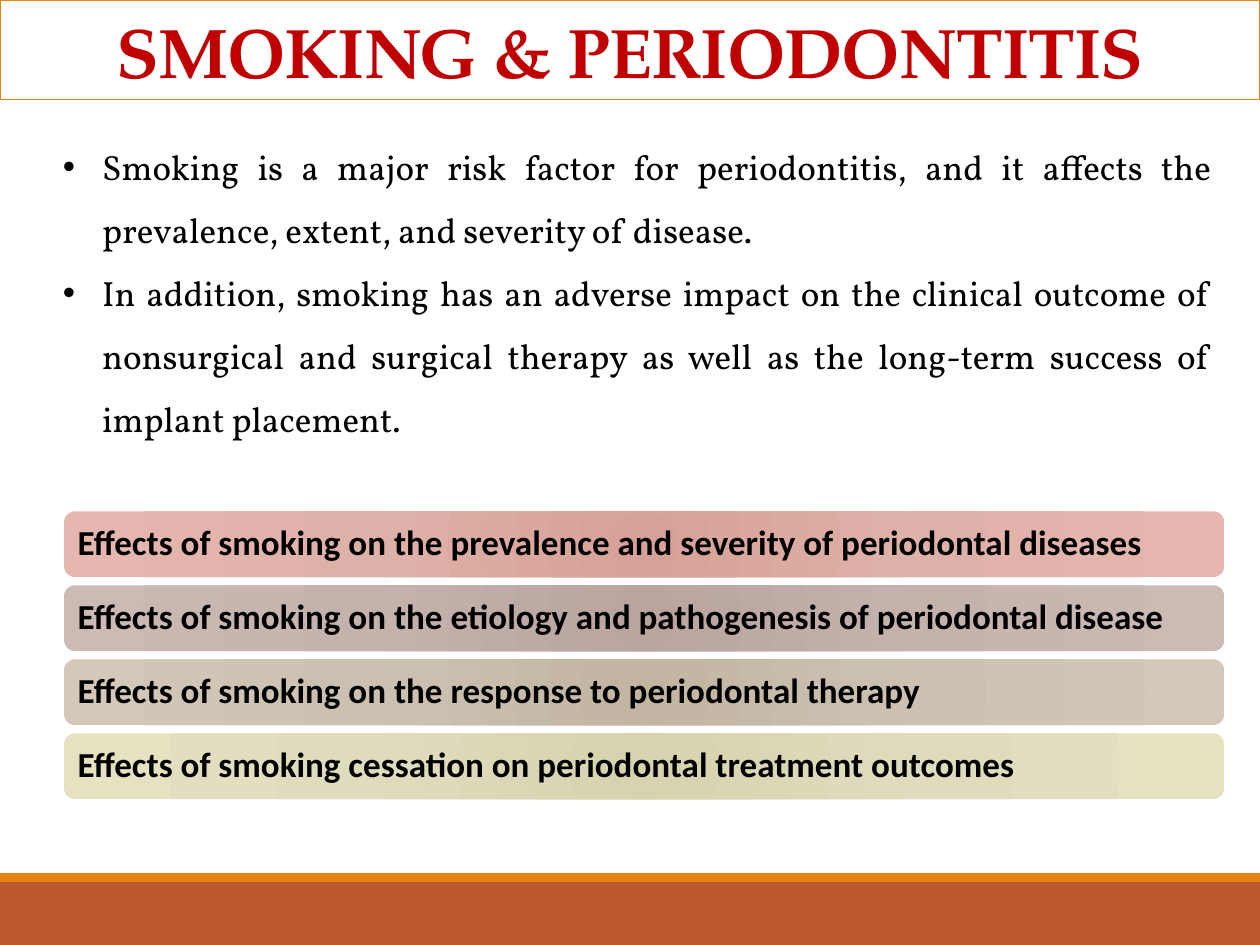
from pptx import Presentation
from pptx.dml.color import RGBColor
from pptx.enum import shapes, text
from pptx.oxml import parse_xml
from pptx.oxml.ns import nsdecls
from pptx.util import Pt

# Content
TITLE = "SMOKING & PERIODONTITIS"
POINTS = [
    "Smoking is a major risk factor for periodontitis, and it affects the "
    "prevalence, extent, and severity of disease. ",
    "In addition, smoking has an adverse impact on the clinical outcome of "
    "nonsurgical and surgical therapy as well as the long-term success of "
    "implant placement.",
]
# Topic, then its gradient colours from the centre outwards
TOPICS = [
    ("Effects of smoking on the prevalence and severity of periodontal diseases",
     ("D7A197", "DEB1A8", "E6B7AE")),
    ("Effects of smoking on the etiology and pathogenesis of periodontal disease",
     ("B9A49E", "C4B2AD", "CCBAB5")),
    ("Effects of smoking on the response to periodontal therapy",
     ("C2B5A2", "CCC1B1", "D4C8B8")),
    ("Effects of smoking cessation on periodontal treatment outcomes",
     ("D7D3AF", "DFDBBD", "E5E1C1")),
]
STOPS = (0, 45, 100)

RUST = RGBColor(0xBD, 0x58, 0x2C)
ORANGE = RGBColor(0xE4, 0x83, 0x12)
RED = RGBColor(0xC0, 0x00, 0x00)
BLACK = RGBColor(0, 0, 0)
WHITE = RGBColor(0xFF, 0xFF, 0xFF)

# Layout, in points
WIDTH, HEIGHT = 720, 540
BAR_LEFT, BAR_TOP, BAR_WIDTH, BAR_HEIGHT, BAR_PITCH = 36.6, 292.2, 663, 37.6, 42.3


def place(shape, left, top, width, height):
    shape.left, shape.top = Pt(left), Pt(top)
    shape.width, shape.height = Pt(width), Pt(height)


def add_box(page, kind, left, top, width, height, fill=None):
    box = page.shapes.add_shape(kind, Pt(left), Pt(top), Pt(width), Pt(height))
    box.shadow.inherit = False
    box.line.fill.background()
    if fill is not None:
        box.fill.solid()
        box.fill.fore_color.rgb = fill
    return box


def write(para, words, *, font, size, color=BLACK, bold=False,
          align=text.PP_ALIGN.LEFT, spacing=1.0):
    para.alignment = align
    para.line_spacing = spacing
    para.space_before = para.space_after = Pt(0)
    span = para.add_run()
    span.text = words
    span.font.name, span.font.size = font, Pt(size)
    span.font.bold, span.font.color.rgb = bold, color
    return span


def add_bullet(para, indent):
    props = para._p.get_or_add_pPr()
    props.set("marL", str(Pt(indent)))
    props.set("indent", str(-Pt(indent)))
    props.append(parse_xml(f'<a:buFont {nsdecls("a")} typeface="Arial"/>'))
    props.append(parse_xml(f'<a:buChar {nsdecls("a")} char="•"/>'))


def fill_radial(box, colors):
    stops = "".join(
        f'<a:gs pos="{pos * 1000}"><a:srgbClr val="{color}"/></a:gs>'
        for pos, color in zip(STOPS, colors))
    radial = parse_xml(
        f'<a:gradFill {nsdecls("a")} rotWithShape="1"><a:gsLst>{stops}</a:gsLst>'
        '<a:path path="circle"><a:fillToRect l="50000" t="50000" r="50000" '
        'b="50000"/></a:path></a:gradFill>')
    box.fill.background()
    props = box._element.spPr
    props.replace(props.find(".//{*}noFill"), radial)


def main():
    deck = Presentation()
    deck.slide_width, deck.slide_height = Pt(WIDTH), Pt(HEIGHT)
    page = deck.slides.add_slide(deck.slide_layouts[5])
    rect = shapes.MSO_SHAPE.RECTANGLE

    # Footer bands
    add_box(page, rect, 0, 504, WIDTH, 36, RUST)
    add_box(page, rect, 0, 499, WIDTH, 5, ORANGE)

    # Title
    title = page.shapes.title
    place(title, 0, 0, WIDTH, 56.9)
    title.line.color.rgb, title.line.width = ORANGE, Pt(0.75)
    frame = title.text_frame
    frame.auto_size = text.MSO_AUTO_SIZE.NONE
    frame.vertical_anchor = text.MSO_ANCHOR.BOTTOM
    span = write(frame.paragraphs[0], TITLE, font="TeX Gyre Pagella", size=40,
                 color=RED, bold=True, align=text.PP_ALIGN.CENTER, spacing=0.85)
    span.font._element.set("spc", "-50")

    # Bulleted introduction
    body = add_box(page, rect, 28.8, 67.7, 671, 189.4, WHITE)
    frame = body.text_frame
    frame.word_wrap = True
    frame.vertical_anchor = text.MSO_ANCHOR.TOP
    for index, point in enumerate(POINTS):
        para = frame.add_paragraph() if index else frame.paragraphs[0]
        write(para, point, font="Vollkorn", size=20,
              align=text.PP_ALIGN.JUSTIFY, spacing=1.5)
        add_bullet(para, 22.5)

    # Topic bars
    for index, (topic, colors) in enumerate(TOPICS):
        bar = add_box(page, shapes.MSO_SHAPE.ROUNDED_RECTANGLE, BAR_LEFT,
                      BAR_TOP + index * BAR_PITCH, BAR_WIDTH, BAR_HEIGHT)
        fill_radial(bar, colors)
        frame = bar.text_frame
        frame.word_wrap = True
        frame.vertical_anchor = text.MSO_ANCHOR.MIDDLE
        frame.margin_left = frame.margin_right = Pt(6)
        write(frame.paragraphs[0], topic, font="Calibri", size=20, bold=True,
              spacing=0.9)

    deck.save("out.pptx")


if __name__ == "__main__":
    main()
